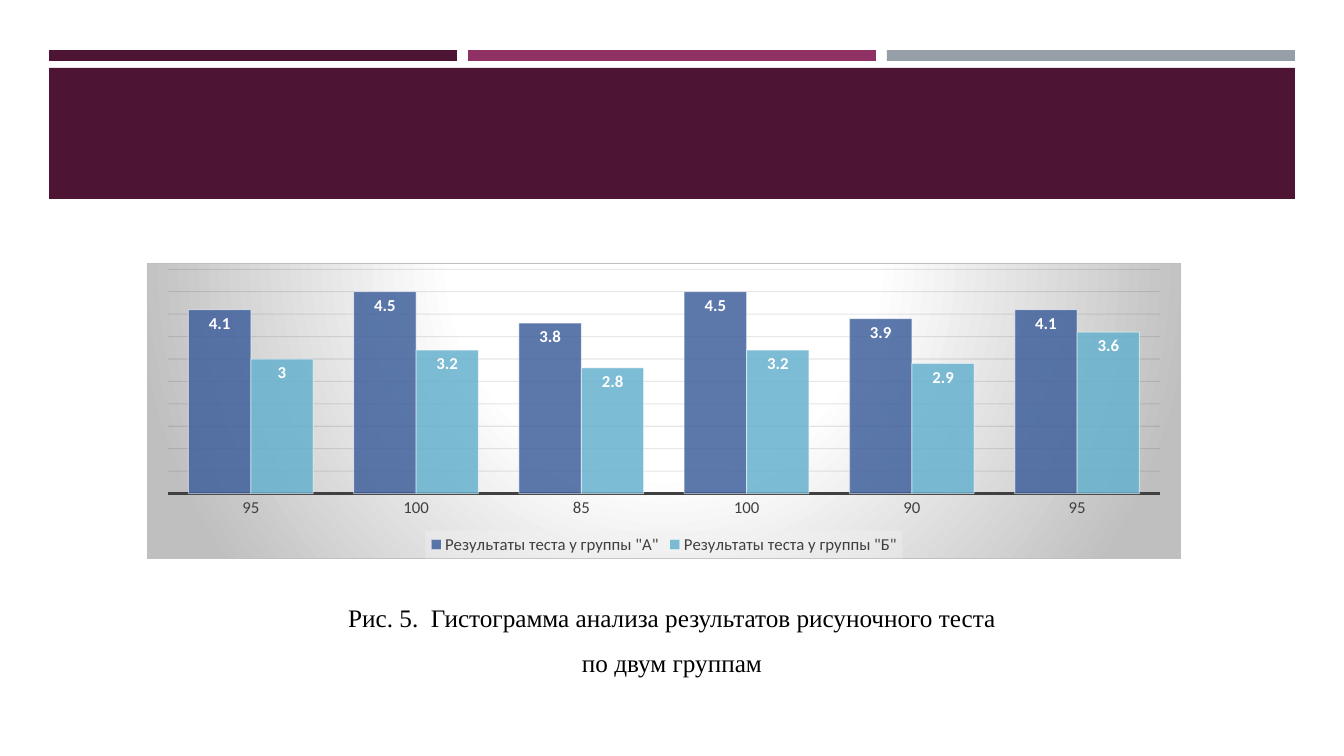
from lxml import etree
from pptx import Presentation
from pptx import util as u
from pptx.chart.data import CategoryChartData
from pptx.dml.color import RGBColor
from pptx.enum import chart as charts, shapes, text
from pptx.oxml import parse_xml
from pptx.oxml.ns import nsdecls, qn

PX = 914400 / 100.8

PLUM = RGBColor(0x4D, 0x14, 0x34)
MAGENTA = RGBColor(0x90, 0x31, 0x63)
GREY = RGBColor(0x96, 0x9F, 0xA7)
BLUE = RGBColor(0x40, 0x61, 0x9D)
SKY = RGBColor(0x66, 0xB1, 0xCE)
WHITE = RGBColor(0xFF, 0xFF, 0xFF)
BLACK = RGBColor(0, 0, 0)
DARK = RGBColor(0x40, 0x40, 0x40)
GRID = RGBColor(0x0D, 0x0D, 0x0D)
SILVER = RGBColor(0xBF, 0xBF, 0xBF)
PALE = RGBColor(0xF2, 0xF2, 0xF2)

CATEGORIES = ["95", "100", "85", "100", "90", "95"]
GROUPS = [
    ('Результаты теста у группы "А"', [4.1, 4.5, 3.8, 4.5, 3.9, 4.1], BLUE),
    ('Результаты теста у группы "Б"', [3, 3.2, 2.8, 3.2, 2.9, 3.6], SKY),
]
CAPTION = "Рис. 5.  Гистограмма анализа результатов рисуночного теста по двум группам"


def px(*lengths):
    return [u.Emu(round(length * PX)) for length in lengths]


def set_alpha(element, colour_xpath, percent):
    for colour in element.xpath(colour_xpath):
        etree.SubElement(colour, qn("a:alpha")).set("val", str(percent * 1000))


def set_font(font, size, colour, name="Calibri", bold=False):
    font.size, font.name, font.bold = u.Pt(size), name, bold
    font.color.rgb = colour


class SlideBuilder:
    def __init__(self, presentation):
        self.slide = presentation.slides.add_slide(presentation.slide_layouts[6])

    def bar(self, left, top, width, height, colour):
        shape = self.slide.shapes.add_shape(
            shapes.MSO_SHAPE.RECTANGLE, *px(left, top, width, height))
        shape.shadow.inherit = False
        shape.fill.solid()
        shape.fill.fore_color.rgb = colour
        shape.line.fill.background()

    def caption(self, left, top, width, height, words):
        frame = self.slide.shapes.add_textbox(*px(left, top, width, height)).text_frame
        frame.word_wrap = True
        paragraph = frame.paragraphs[0]
        paragraph.text = words
        paragraph.alignment = text.PP_ALIGN.CENTER
        paragraph.line_spacing = 1.5
        set_font(paragraph.font, 18, BLACK, "Times New Roman")

    def column_chart(self, left, top, width, height, categories, groups):
        data = CategoryChartData()
        data.categories = categories
        for name, values, _ in groups:
            data.add_series(name, values)
        chart = self.slide.shapes.add_chart(
            charts.XL_CHART_TYPE.COLUMN_CLUSTERED,
            *px(left, top, width, height), data).chart
        set_font(chart.font, 10, BLACK)
        chart.has_title = False
        self.style_axes(chart)
        self.style_legend(chart)
        self.style_background(chart)
        chart.plots[0].gap_width = 65
        chart.plots[0].overlap = 0
        chart.plots[0].vary_by_categories = False
        for series, (_, _, colour) in zip(chart.plots[0].series, groups):
            self.style_series(series, colour)

    def style_axes(self, chart):
        category_axis, value_axis = chart.category_axis, chart.value_axis
        category_axis.major_tick_mark = charts.XL_TICK_MARK.NONE
        category_axis.format.line.color.rgb = DARK
        category_axis.format.line.width = u.Pt(1.5)
        set_font(category_axis.tick_labels.font, 12, DARK)
        value_axis.visible = False
        value_axis.minimum_scale, value_axis.maximum_scale = 0, 5
        value_axis.major_unit = 0.5
        value_axis.has_major_gridlines = True
        grid_line = value_axis.major_gridlines.format.line
        grid_line.color.rgb = GRID
        grid_line.width = u.Pt(0.75)
        set_alpha(value_axis._element, "c:majorGridlines//a:srgbClr", 10)

    def style_legend(self, chart):
        chart.has_legend = True
        legend = chart.legend
        legend.position = charts.XL_LEGEND_POSITION.BOTTOM
        legend.include_in_layout = False
        set_font(legend.font, 12, DARK)
        legend._element.find(qn("c:overlay")).addnext(parse_xml(
            f'<c:spPr {nsdecls("c", "a")}><a:solidFill><a:srgbClr val="{PALE}">'
            '<a:alpha val="39000"/></a:srgbClr></a:solidFill></c:spPr>'))

    def style_background(self, chart):
        stops = "".join(
            f'<a:gs pos="{position}000"><a:srgbClr val="{colour}"/></a:gs>'
            for position, colour in [(0, WHITE), (39, WHITE), (100, SILVER)])
        chart._chartSpace.find(qn("c:chart")).addnext(parse_xml(
            f'<c:spPr {nsdecls("c", "a")}><a:gradFill><a:gsLst>{stops}</a:gsLst>'
            '<a:path path="circle"><a:fillToRect l="50000" t="-80000" r="50000" '
            'b="180000"/></a:path></a:gradFill><a:ln w="9525"><a:solidFill>'
            f'<a:srgbClr val="{SILVER}"/></a:solidFill></a:ln></c:spPr>'))

    def style_series(self, series, colour):
        series.format.fill.solid()
        series.format.fill.fore_color.rgb = colour
        series.format.line.color.rgb = WHITE
        series.format.line.width = u.Pt(0.75)
        set_alpha(series._element, "c:spPr/a:solidFill/a:srgbClr", 85)
        set_alpha(series._element, "c:spPr/a:ln//a:srgbClr", 50)
        labels = series.data_labels
        labels.show_value = True
        labels.position = charts.XL_LABEL_POSITION.INSIDE_END
        set_font(labels.font, 12, WHITE, bold=True)


def main():
    presentation = Presentation()
    presentation.slide_width, presentation.slide_height = px(1344, 756)
    builder = SlideBuilder(presentation)

    # Header band with three stripes
    for column, colour in enumerate([PLUM, MAGENTA, GREY]):
        builder.bar(49 + 419 * column, 50, 408, 11, colour)
    builder.bar(49, 68, 1246, 131, PLUM)

    # Test results by group
    builder.column_chart(147, 263, 1034, 296, CATEGORIES, GROUPS)
    builder.caption(336, 582, 672, 102, CAPTION)

    presentation.save("out.pptx")


if __name__ == "__main__":
    main()
